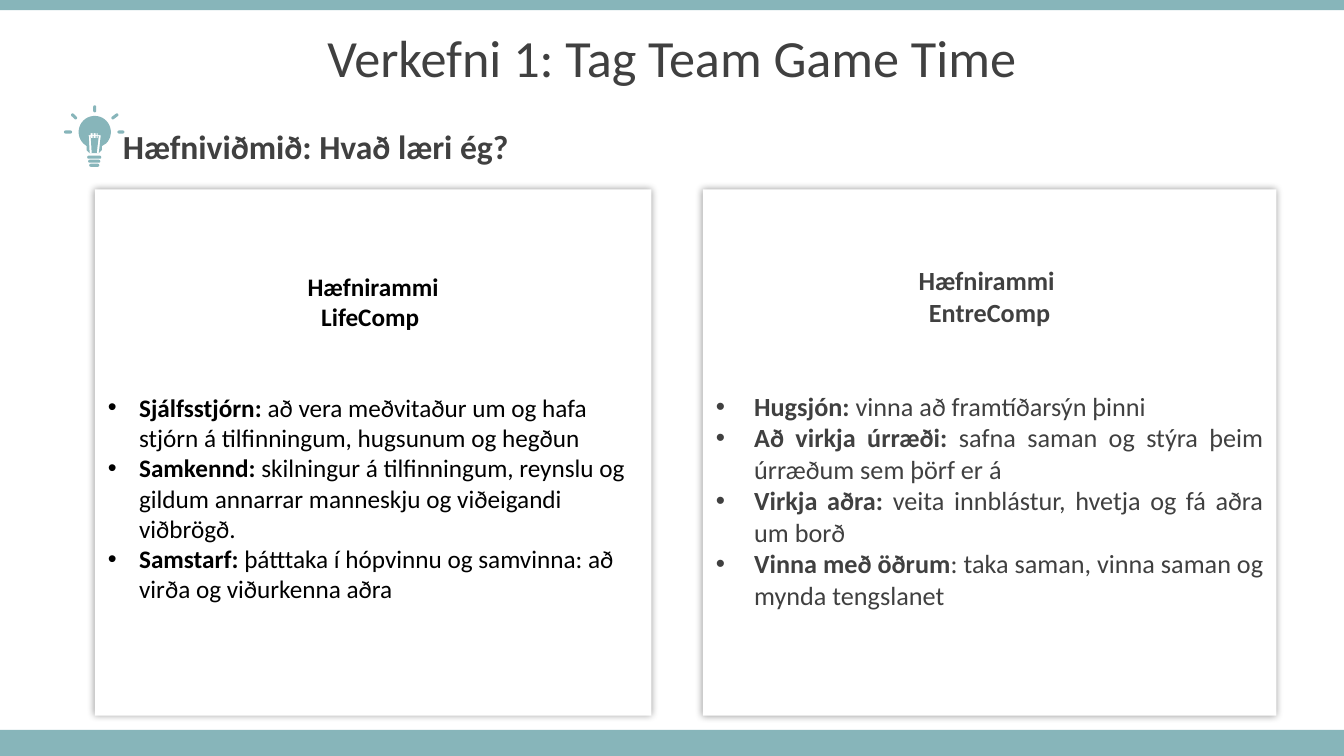
"""Build the slide on the learning outcomes of the first task."""
from dataclasses import dataclass
from math import atan2, cos, pi, radians, sin

from lxml.etree import SubElement
from pptx import Presentation
from pptx.dml.color import RGBColor
from pptx.enum.shapes import MSO_SHAPE
from pptx.enum.text import MSO_ANCHOR, MSO_AUTO_SIZE, PP_ALIGN
from pptx.oxml.ns import qn
from pptx.util import Inches, Pt

TEAL = RGBColor(0x87, 0xB5, 0xBA)
GREY = RGBColor(0x40, 0x40, 0x40)
BLACK = RGBColor(0, 0, 0)
WHITE = RGBColor(0xFF, 0xFF, 0xFF)
FONT = "Calibri"
LINE_HEIGHT = 1.2

Outline = list[tuple[float, float]]


@dataclass
class Band:
    top: float
    height: float


@dataclass
class Bar:
    x1: float
    y1: float
    x2: float
    y2: float


@dataclass
class Panel:
    left: float
    width: float
    size: float
    color: RGBColor
    indent: float
    align: PP_ALIGN
    headings: list[str]
    items: list[tuple[str, str]]


BANDS = [Band(7.24, 0.26), Band(0, 0.1)]

RAYS_AND_BASE = [
    Bar(0.65, 1.31, 0.7, 1.31),
    Bar(1.18, 1.31, 1.22, 1.31),
    Bar(0.72, 1.14, 0.75, 1.17),
    Bar(1.16, 1.14, 1.12, 1.17),
    Bar(0.94, 1.06, 0.94, 1.1),
    Bar(0.88, 1.56, 0.99, 1.56),
    Bar(0.89, 1.6, 0.98, 1.6),
    Bar(0.9, 1.64, 0.97, 1.64),
]

NECK = [(1.01, 1.45), (1.01, 1.49), (0.98, 1.52),
        (0.89, 1.52), (0.86, 1.49), (0.86, 1.45)]

FILAMENT = [
    (0.9, 1.32), (0.9, 1.34), (0.88, 1.34), (0.89, 1.52), (0.91, 1.52),
    (0.9, 1.35), (0.9, 1.37), (0.92, 1.37), (0.92, 1.35), (0.93, 1.35),
    (0.93, 1.37), (0.95, 1.37), (0.95, 1.35), (0.96, 1.35), (0.96, 1.37),
    (0.97, 1.37), (0.97, 1.35), (0.98, 1.35), (0.96, 1.52), (0.98, 1.52),
    (1, 1.34), (0.97, 1.34), (0.97, 1.32), (0.96, 1.32), (0.96, 1.34),
    (0.95, 1.34), (0.95, 1.32), (0.93, 1.32), (0.93, 1.34), (0.92, 1.34),
    (0.92, 1.32),
]

PANELS = [
    Panel(0.94, 5.52, 18, BLACK, 0.31, PP_ALIGN.LEFT,
          ["Hæfnirammi", "LifeComp "],
          [("Sjálfsstjórn: ", "að vera meðvitaður um og hafa stjórn á "
            "tilfinningum, hugsunum og hegðun"),
           ("Samkennd: ", "skilningur á tilfinningum, reynslu og gildum "
            "annarrar manneskju og viðeigandi viðbrögð."),
           ("Samstarf: ", "þátttaka í hópvinnu og samvinna: að virða og "
            "viðurkenna aðra")]),
    Panel(6.97, 5.69, 18.7, GREY, 0.38, PP_ALIGN.JUSTIFY,
          ["Hæfnirammi ", "EntreComp"],
          [("Hugsjón: ", "vinna að framtíðarsýn þinni"),
           ("Að virkja úrræði: ", "safna saman og stýra þeim úrræðum sem "
            "þörf er á"),
           ("Virkja aðra: ", "veita innblástur, hvetja og fá aðra um borð"),
           ("Vinna með öðrum", ": taka saman, vinna saman og mynda "
            "tengslanet")]),
]


def place(sp, left: float, top: float, width: float, height: float) -> None:
    sp.left, sp.top = Inches(left), Inches(top)
    sp.width, sp.height = Inches(width), Inches(height)


def format_run(r, size: float, color: RGBColor, bold: bool) -> None:
    r.font.name, r.font.size = FONT, Pt(size)
    r.font.bold, r.font.color.rgb = bold, color


def format_frame(tf) -> None:
    tf.word_wrap = True
    tf.auto_size = MSO_AUTO_SIZE.NONE
    tf.vertical_anchor = MSO_ANCHOR.MIDDLE


def paint(sp, color: RGBColor) -> None:
    sp.fill.solid()
    sp.fill.fore_color.rgb = color
    sp.line.fill.background()
    sp.shadow.inherit = False


def add_band(slide, band: Band) -> None:
    sp = slide.shapes.add_shape(MSO_SHAPE.RECTANGLE, 0, Inches(band.top),
                                Inches(13.33), Inches(band.height))
    paint(sp, TEAL)


def arc(x: float, y: float, radius: float, start: float, sweep: float,
        steps: int) -> Outline:
    angles = [start + sweep * i / steps for i in range(steps + 1)]
    return [(x + radius * cos(a), y + radius * sin(a)) for a in angles]


def capsule(bar: Bar) -> Outline:
    turn = atan2(bar.y2 - bar.y1, bar.x2 - bar.x1)
    return (arc(bar.x2, bar.y2, 0.015, turn - pi / 2, pi, 6)
            + arc(bar.x1, bar.y1, 0.015, turn + pi / 2, pi, 6))


def add_bulb(slide) -> None:
    glass = arc(0.94, 1.31, 0.16, radians(135), radians(270), 30) + NECK
    outlines = [glass, FILAMENT, *map(capsule, RAYS_AND_BASE)]
    contours = [[(Inches(x), Inches(y)) for x, y in o] for o in outlines]
    builder = slide.shapes.build_freeform(*contours[0][0])
    builder.add_line_segments(contours[0][1:], close=True)
    for contour in contours[1:]:
        builder.move_to(*contour[0])
        builder.add_line_segments(contour[1:], close=True)
    paint(builder.convert_to_shape(), TEAL)


def add_glow(sp) -> None:
    effects = sp._element.spPr.find(qn("a:effectLst"))
    shadow = SubElement(effects, qn("a:outerShdw"), blurRad=str(Pt(5)),
                        dist="0", dir="0", algn="ctr", rotWithShape="0")
    color = SubElement(shadow, qn("a:srgbClr"), val=str(BLACK))
    SubElement(color, qn("a:alpha"), val="40000")


def fill_panel(sp, panel: Panel) -> None:
    place(sp, panel.left, 1.88, panel.width, 5.22)
    paint(sp, WHITE)
    add_glow(sp)
    tf = sp.text_frame
    format_frame(tf)
    tf.margin_left = tf.margin_right = Inches(0.13)
    tf.margin_top, tf.margin_bottom = Inches(0.07), Inches(0.37)
    tf.text = "\n".join(panel.headings)
    for p in tf.paragraphs:
        p.alignment, p.space_before = PP_ALIGN.CENTER, Pt(0)
        pPr = p._p.get_or_add_pPr()
        pPr.set("marL", "0")
        pPr.set("indent", "0")
        SubElement(pPr, qn("a:buNone"))
        format_run(p.runs[0], panel.size, panel.color, True)
    for i, (term, meaning) in enumerate(panel.items):
        p = tf.add_paragraph()
        p.alignment = panel.align
        p.space_before = Pt(0 if i else 2 * panel.size * LINE_HEIGHT)
        pPr = p._p.get_or_add_pPr()
        pPr.set("marL", str(Inches(panel.indent)))
        pPr.set("indent", str(-Inches(panel.indent)))
        SubElement(pPr, qn("a:buChar"), char="•")
        for text, bold in ((term, True), (meaning, False)):
            r = p.add_run()
            r.text = text
            format_run(r, panel.size, panel.color, bold)


def main() -> None:
    prs = Presentation()
    prs.slide_width, prs.slide_height = Inches(13.33), Inches(7.5)
    slide = prs.slides.add_slide(prs.slide_layouts[3])
    for band in BANDS:
        add_band(slide, band)
    title = slide.shapes.title
    place(title, 0, 0.18, 13.33, 0.84)
    question = slide.shapes.add_textbox(0, 0, 0, 0)
    place(question, 1.12, 1.24, 6.58, 0.41)
    for sp, text, size, bold in (
            (title, "Verkefni 1: Tag Team Game Time", 37.3, False),
            (question, "Hæfniviðmið: Hvað læri ég?", 24, True)):
        format_frame(sp.text_frame)
        sp.text_frame.text = text
        format_run(sp.text_frame.paragraphs[0].runs[0], size, GREY, bold)
    title.text_frame.paragraphs[0].line_spacing = 0.9
    add_bulb(slide)
    for index, panel in enumerate(PANELS, start=1):
        fill_panel(slide.placeholders[index], panel)
    prs.save("out.pptx")


if __name__ == "__main__":
    main()
